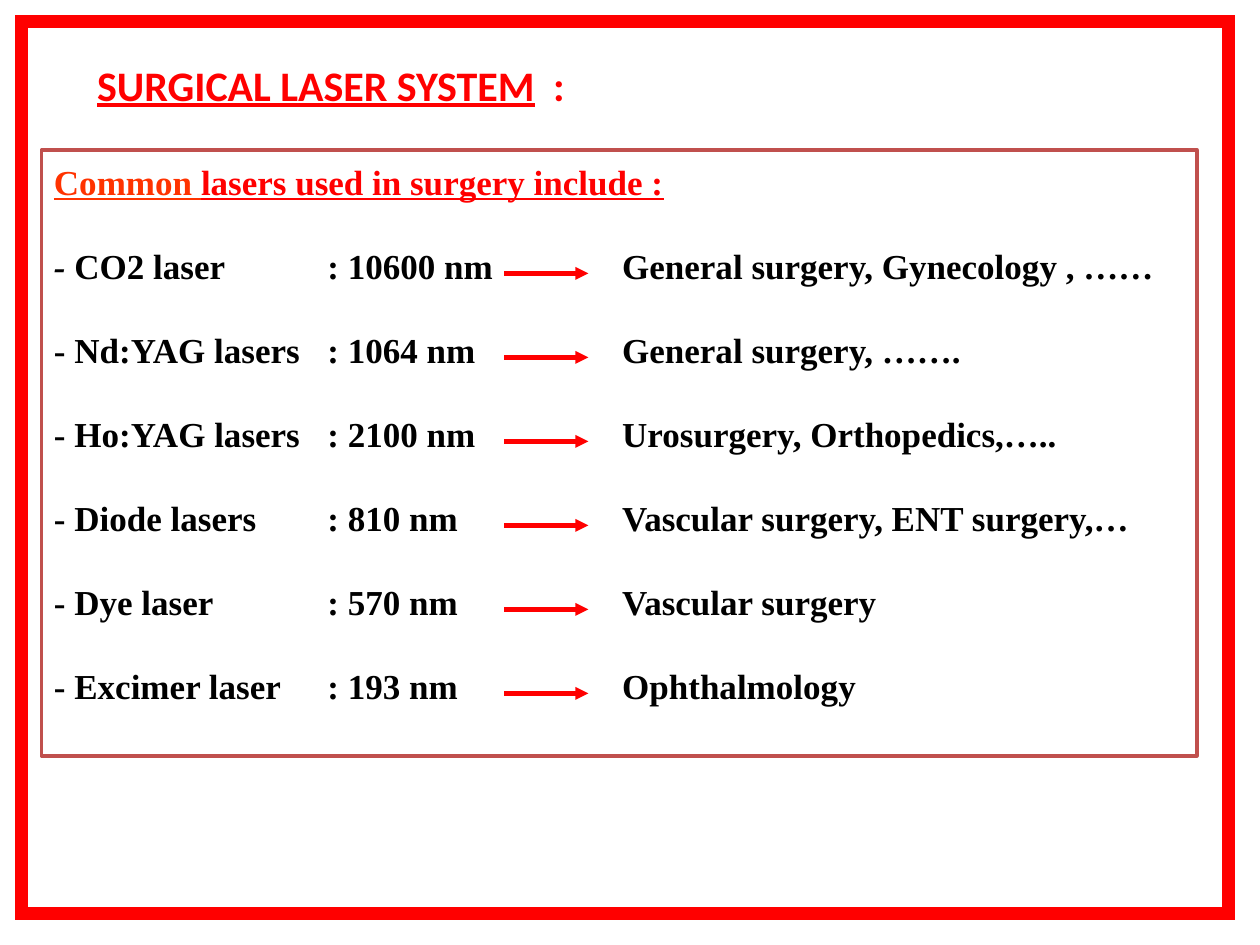
from lxml.etree import SubElement
from pptx import Presentation
from pptx.dml.color import RGBColor
from pptx.enum.shapes import MSO_CONNECTOR, MSO_SHAPE
from pptx.enum.text import MSO_ANCHOR, MSO_AUTO_SIZE, PP_ALIGN
from pptx.oxml.ns import qn
from pptx.util import Inches, Pt

COLORS = {"red": "FF0000", "orange": "FF3300", "border": "C0504D", "white": "FFFFFF", "black": "000000"}
TITLE = "SURGICAL LASER SYSTEM"
HEADING = [("Common ", "orange"), ("lasers used in surgery include :", "red")]
LASERS = [
    ("CO2 laser", "10600 nm", "General surgery, Gynecology , ……"),
    ("Nd:YAG lasers", "1064 nm", "General surgery, ……."),
    ("Ho:YAG lasers", "2100 nm", "Urosurgery, Orthopedics,….."),
    ("Diode lasers", "810 nm", "Vascular surgery, ENT surgery,…"),
    ("Dye laser", "570 nm", "Vascular surgery"),
    ("Excimer laser", "193 nm", "Ophthalmology"),
]
TITLE_TABS = [3.62]
LASER_TABS = [2.17, 4.51]
FIRST_ARROW_TOP = 2.17
ROW_PITCH = 2 / 3


def rgb(name):
    return RGBColor.from_string(COLORS[name])


def set_line(shape, color, width):
    shape.line.color.rgb = rgb(color)
    shape.line.width = Pt(width)


def set_font(font, name, size, color):
    font.name, font.size, font.bold = name, Pt(size), True
    font.color.rgb = rgb(color)


def format_paragraph(paragraph, tabs):
    paragraph.alignment = PP_ALIGN.LEFT
    tab_list = SubElement(paragraph._p.get_or_add_pPr(), qn("a:tabLst"))
    for position in tabs:
        SubElement(tab_list, qn("a:tab"), pos=str(Inches(position)), algn="l")


def add_run(paragraph, text):
    run = paragraph.add_run()
    run.text = text
    return run


def add_rectangle(slide, left, top, width, height, color, line_width):
    rectangle = slide.shapes.add_shape(
        MSO_SHAPE.RECTANGLE, Inches(left), Inches(top), Inches(width), Inches(height)
    )
    rectangle.shadow.inherit = False
    set_line(rectangle, color, line_width)
    return rectangle


def add_title(slide):
    title = slide.shapes.title
    title.left, title.top = Inches(0.67), Inches(0.42)
    title.width, title.height = Inches(4.1), Inches(0.5)
    frame = title.text_frame
    frame.auto_size = MSO_AUTO_SIZE.NONE
    frame.vertical_anchor = MSO_ANCHOR.MIDDLE
    paragraph = frame.paragraphs[0]
    format_paragraph(paragraph, TITLE_TABS)
    set_font(paragraph.font, "Calibri", 24, "red")
    add_run(paragraph, TITLE).font.underline = True
    add_run(paragraph, "\t:")


def add_laser_list(slide):
    box = add_rectangle(slide, 0.33, 1.19, 9.17, 4.81, "border", 2)
    box.fill.solid()
    box.fill.fore_color.rgb = rgb("white")
    frame = box.text_frame
    frame.word_wrap = True
    frame.vertical_anchor = MSO_ANCHOR.TOP
    frame.margin_top = Inches(0.08)

    heading = frame.paragraphs[0]
    heading.alignment = PP_ALIGN.LEFT
    heading.line_spacing = Pt(24)
    for text, color in HEADING:
        run = add_run(heading, text)
        set_font(run.font, "Times New Roman", 20, color)
        run.font.underline = True

    for index, (laser, wavelength, uses) in enumerate(LASERS):
        paragraph = frame.add_paragraph()
        format_paragraph(paragraph, LASER_TABS)
        paragraph.space_before = Pt(24)
        paragraph.line_spacing = Pt(24)
        set_font(paragraph.font, "Times New Roman", 20, "black")
        add_run(paragraph, "- ").font.italic = index == 0
        add_run(paragraph, f"{laser}\t: {wavelength}\t{uses}")


def add_arrow(slide, top):
    arrow = slide.shapes.add_connector(
        MSO_CONNECTOR.STRAIGHT, Inches(4), Inches(top), Inches(4.67), Inches(top)
    )
    set_line(arrow, "red", 2.5)
    SubElement(arrow.line._get_or_add_ln(), qn("a:tailEnd"), type="triangle")
    SubElement(arrow._element.spPr, qn("a:effectLst"))


def add_frame(slide):
    frame = add_rectangle(slide, 0.17, 0.17, 9.58, 7.08, "red", 7)
    frame.fill.background()
    SubElement(frame.line._get_or_add_ln(), qn("a:miter"), lim="800000")


def main():
    presentation = Presentation()
    presentation.slide_width, presentation.slide_height = Inches(10), Inches(7.5)
    slide = presentation.slides.add_slide(presentation.slide_layouts[5])
    add_laser_list(slide)
    for row in range(len(LASERS)):
        add_arrow(slide, FIRST_ARROW_TOP + row * ROW_PITCH)
    add_title(slide)
    add_frame(slide)
    presentation.save("out.pptx")


if __name__ == "__main__":
    main()
